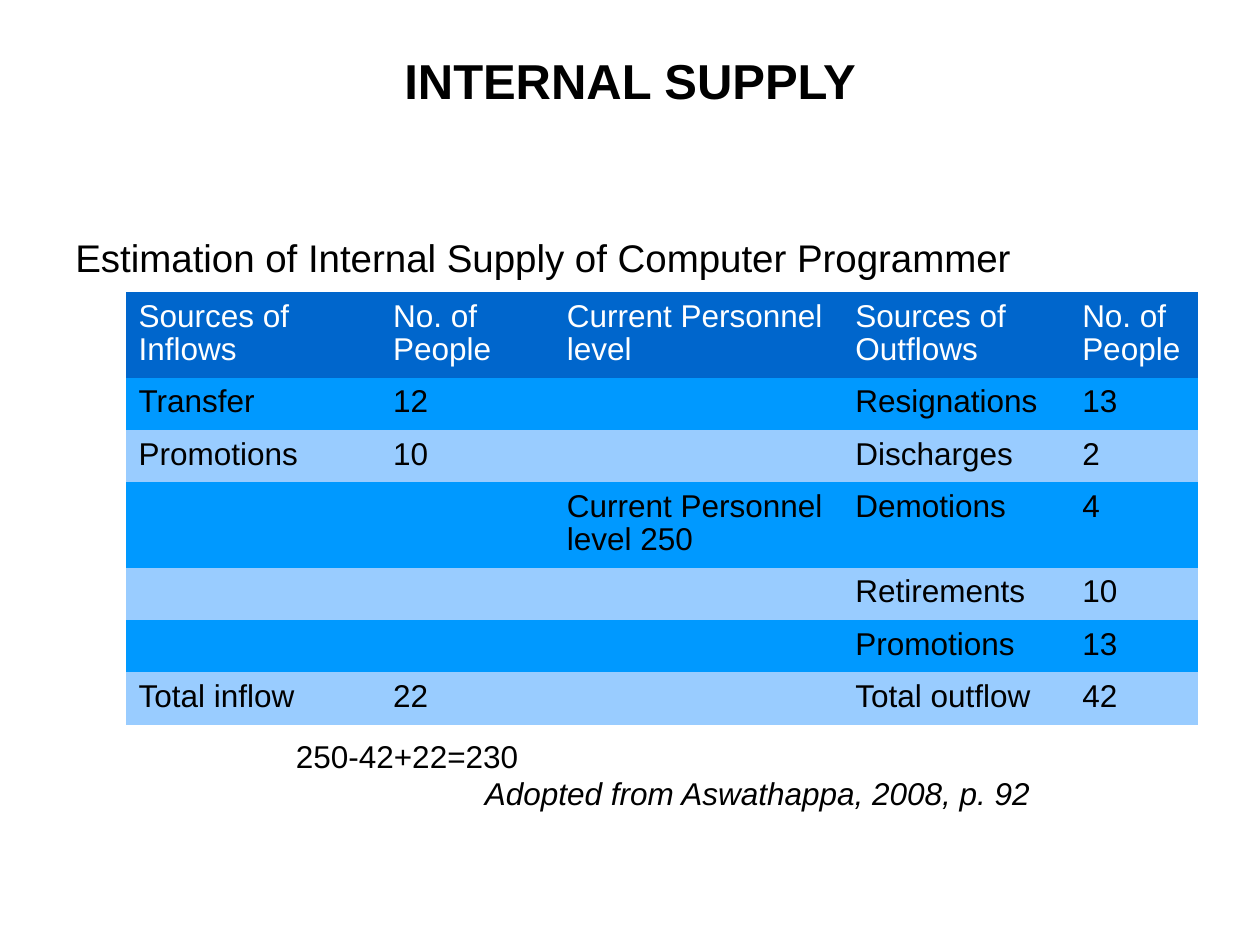
from dataclasses import dataclass

import pptx
import pptx.enum.text
import pptx.oxml
import pptx.oxml.ns
import pptx.util
from pptx.dml.color import RGBColor

ALIGN = pptx.enum.text.PP_ALIGN
ANCHOR = pptx.enum.text.MSO_ANCHOR


@dataclass(frozen=True)
class Theme:
    font: str = "Arial"
    ink: str = "000000"
    paper: str = "FFFFFF"
    head: str = "0066CC"
    bands: tuple = ("0099FF", "99CCFF")
    title: int = 28
    lead: int = 22
    body: int = 18
    line: float = 0.93


@dataclass(frozen=True)
class Box:
    """A place on the grid, in columns and rows."""
    col: float
    row: float
    wide: float
    high: float

    def place(self) -> tuple:
        return tuple(map(unit, (self.col, self.row, self.wide, self.high)))


@dataclass(frozen=True)
class Note:
    text: str
    box: Box
    size: int
    line: float
    top: float = 0.05
    after: float = 0
    italic: bool = False


THEME = Theme()
CELL = 0.5  # inches per grid step: 20 columns by 15 rows


def unit(steps: float) -> int:
    return pptx.util.Inches(steps * CELL)


def write(frame, text: str, size: int, color: str, line: float = 1.0,
          top: float = 0.05, bold: bool = False, italic: bool = False):
    """Fill a text frame with one run and return its paragraph."""
    frame.word_wrap = True
    frame.vertical_anchor = ANCHOR.TOP
    frame.margin_left = frame.margin_right = pptx.util.Inches(0.1)
    frame.margin_top = pptx.util.Inches(top)
    frame.margin_bottom = pptx.util.Inches(0.05)
    para = frame.paragraphs[0]
    para.line_spacing = line
    run = para.add_run()
    run.text = text
    font = run.font
    font.name, font.size = THEME.font, pptx.util.Pt(size)
    font.bold, font.italic = bold, italic
    font.color.rgb = RGBColor.from_string(color)
    return para


def add_note(slide, note: Note) -> None:
    shape = slide.shapes.add_textbox(*note.box.place())
    para = write(shape.text_frame, note.text, note.size, THEME.ink,
                 note.line, note.top, italic=note.italic)
    para.space_after = pptx.util.Pt(note.after)


def edge(cell) -> None:
    """Give a cell hairline borders."""
    props = cell._tc.get_or_add_tcPr()
    for side in "LRTB":
        props.append(pptx.oxml.parse_xml(
            f'<a:ln{side} {pptx.oxml.ns.nsdecls("a")} w="360"><a:solidFill>'
            f'<a:srgbClr val="{THEME.paper}"/></a:solidFill></a:ln{side}>'))


def style(cell, text: str, fill: str, ink: str) -> None:
    edge(cell)
    cell.fill.solid()
    cell.fill.fore_color.rgb = RGBColor.from_string(fill)
    if text:
        write(cell.text_frame, text, THEME.body, ink, THEME.line)
        cell.margin_left = cell.margin_right = pptx.util.Inches(0.1)
        cell.margin_top = pptx.util.Inches(0.07)
        cell.margin_bottom = pptx.util.Inches(0.05)
        cell.vertical_anchor = ANCHOR.TOP


def add_grid(slide, box: Box, data: list, cols: tuple, rows: tuple) -> None:
    table = slide.shapes.add_table(len(rows), len(cols), *box.place()).table
    for col, wide in zip(table.columns, cols):
        col.width = unit(wide)
    for idx, (row, high) in enumerate(zip(table.rows, rows)):
        row.height = unit(high)
        fill = THEME.bands[(idx - 1) % 2] if idx else THEME.head
        ink = THEME.ink if idx else THEME.paper
        for cell, text in zip(row.cells, data[idx]):
            style(cell, text, fill, ink)


DATA = [
    ("Sources of Inflows", "No. of People", "Current Personnel level",
     "Sources of Outflows", "No. of People"),
    ("Transfer", "12", "", "Resignations", "13"),
    ("Promotions", "10", "", "Discharges", "2"),
    ("", "", "Current Personnel level 250", "Demotions", "4"),
    ("", "", "", "Retirements", "10"),
    ("", "", "", "Promotions", "13"),
    ("Total inflow", "22", "", "Total outflow", "42"),
]
COLS = (4.04, 2.76, 4.58, 3.6, 2.04)
ONE, TWO = 0.83, 1.28  # heights of one-line and two-line rows
ROWS = (TWO, ONE, ONE, TWO, ONE, ONE, ONE)

LEAD = Note("Estimation of Internal Supply of Computer Programmer",
            Box(1, 3.5, 18, 10), THEME.lead, 1.02, top=0.1, after=14.2)
CITE = Note("Adopted from Aswathappa, 2008, p. 92",
            Box(7.5, 12.24, 11, 0.76), THEME.body, THEME.line, italic=True)
SUM = Note("250-42+22=230", Box(4.5, 11.66, 9.66, 0.76),
           THEME.body, THEME.line)


def main() -> None:
    deck = pptx.Presentation()
    deck.slide_width, deck.slide_height = unit(20), unit(15)
    slide = deck.slides.add_slide(deck.slide_layouts[5])

    # Title
    title = slide.shapes.title
    title.left, title.top, title.width, title.height = Box(
        1, 0.6, 18, 2.8).place()
    para = write(title.text_frame, "INTERNAL SUPPLY", THEME.title, THEME.ink,
                 top=0.1, bold=True)
    para.alignment = ALIGN.CENTER

    # Lead line, table and closing notes
    add_note(slide, LEAD)
    add_grid(slide, Box(2, 4.64, sum(COLS), sum(ROWS)), DATA, COLS, ROWS)
    for note in (CITE, SUM):
        add_note(slide, note)

    deck.save("out.pptx")


if __name__ == "__main__":
    main()
